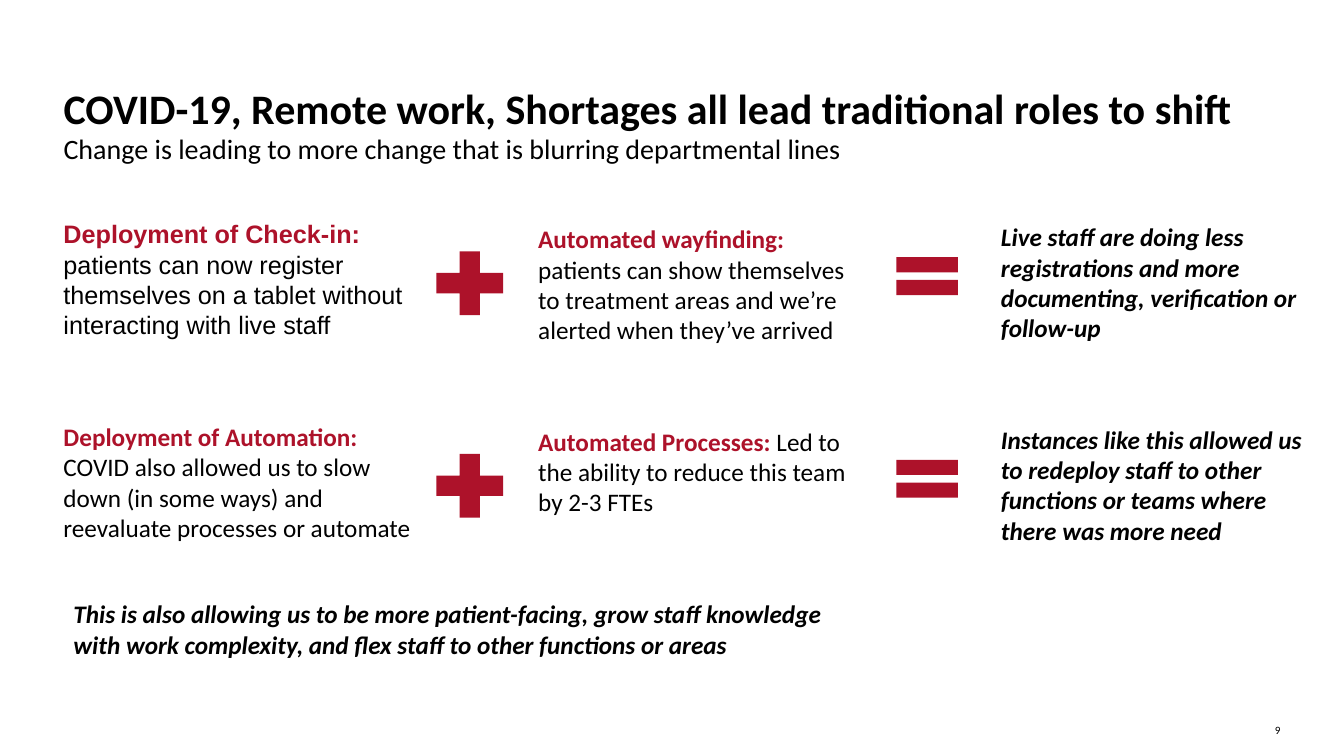
from pptx import Presentation
from pptx import util as u
from pptx.dml.color import RGBColor
from pptx.enum import shapes, text

HUES = {"red": "AD122A", "black": "000000"}
ROWS = [
    (2.17, "Arial",
     ("Deployment of Check-in: ",
      "\npatients can now register \nthemselves on a tablet without \ninteracting with live staff"),
     ("Automated wayfinding: ",
      "patients can show themselves to treatment areas and we’re alerted when they’ve arrived"),
     "Live staff are doing less registrations and more documenting, verification or follow-up"),
    (4.18, "Calibri",
     ("Deployment of Automation: ",
      "\nCOVID also allowed us to slow \ndown (in some ways) and \nreevaluate processes or automate"),
     ("Automated Processes: ", "Led to the ability to reduce this team by 2-3 FTEs"),
     "Instances like this allowed us to redeploy staff to other functions or teams where "
     "there was more need"),
]


def hue(name):
    """Return the named colour."""
    return RGBColor.from_string(HUES[name])


def style(font, size, face="Calibri"):
    """Set the size, face and black colour of a font."""
    font.size, font.name = u.Pt(size), face
    font.color.rgb = hue("black")


def frame(box, pads, anchor=text.MSO_ANCHOR.TOP):
    """Prepare the text frame of a box and return its first paragraph."""
    body = box.text_frame
    body.word_wrap = True
    body.auto_size = text.MSO_AUTO_SIZE.NONE
    body.vertical_anchor = anchor
    body.margin_left = body.margin_right = u.Inches(pads[0])
    body.margin_top = body.margin_bottom = u.Inches(pads[1])
    return body.paragraphs[0]


def add_box(slide, place, pads=(0.1, 0.05), anchor=text.MSO_ANCHOR.TOP):
    """Add a text box and return its first paragraph."""
    box = slide.shapes.add_textbox(*map(u.Inches, place))
    return frame(box, pads, anchor)


def add_title(slide, words):
    """Place and format the slide title."""
    title = slide.shapes.title
    title.left, title.top, title.width, title.height = map(u.Inches, (0.63, 0.89, 12.53, 0.43))
    para = frame(title, (0, 0))
    para.text = words
    para.alignment = text.PP_ALIGN.LEFT
    para.line_spacing = 0.85
    style(para.font, 30)
    para.font.bold = True


def add_lead(slide, place, words, face="Calibri", pads=(0.1, 0.05)):
    """Add a bold red heading followed by plain text."""
    head, rest = words
    para = add_box(slide, place, pads)
    style(para.font, 18, face)
    run = para.add_run()
    run.text = head
    run.font.bold = True
    run.font.color.rgb = hue("red")
    for index, line in enumerate(rest.split("\n")):
        if index:
            para.add_line_break()
        if line:
            para.add_run().text = line


def add_claim(slide, place, words):
    """Add a bold italic statement."""
    para = add_box(slide, place)
    para.text = words
    style(para.font, 18)
    para.font.bold = para.font.italic = True


def add_sign(slide, kind, place, ratios):
    """Add a red mathematical sign."""
    sign = slide.shapes.add_shape(kind, *map(u.Inches, place))
    for index, ratio in enumerate(ratios):
        sign.adjustments[index] = ratio
    sign.shadow.inherit = False
    sign.fill.solid()
    sign.fill.fore_color.rgb = hue("red")
    sign.line.fill.background()


def add_row(slide, top, face, first, second, result):
    """Add one equation of two causes and a result."""
    kinds = shapes.MSO_SHAPE
    add_lead(slide, (0.63, top, 3.73, 1.31), first, face, (0, 0))
    add_sign(slide, kinds.MATH_PLUS, (4.21, top + 0.21, 0.9, 0.86), [0.235])
    add_lead(slide, (5.24, top, 3.33, 1.31), second)
    add_sign(slide, kinds.MATH_EQUAL, (8.78, top + 0.25, 0.83, 0.64), [0.235, 0.118])
    add_claim(slide, (9.83, top - 0.02, 3.33, 1.31), result)


def main():
    """Build and save the slide."""
    deck = Presentation()
    deck.slide_width, deck.slide_height = u.Inches(13.33), u.Inches(7.5)
    slide = deck.slides.add_slide(deck.slide_layouts[5])
    add_title(slide, "COVID-19, Remote work, Shortages all lead traditional roles to shift")
    sub = add_box(slide, (0.63, 1.3, 11.62, 0.43), (0, 0.04))
    sub.text = "Change is leading to more change that is blurring departmental lines"
    sub.line_spacing = 0.9
    style(sub.font, 20)
    for row in ROWS:
        add_row(slide, *row)
    add_claim(slide, (0.63, 5.89, 7.94, 0.71),
              "This is also allowing us to be more patient-facing, grow staff knowledge with work "
              "complexity, and flex staff to other functions or areas")
    page = add_box(slide, (12.4, 7.15, 0.4, 0.18), anchor=text.MSO_ANCHOR.MIDDLE)
    page.text = "9"
    page.alignment = text.PP_ALIGN.RIGHT
    style(page.font, 8)
    deck.save("out.pptx")


if __name__ == "__main__":
    main()
